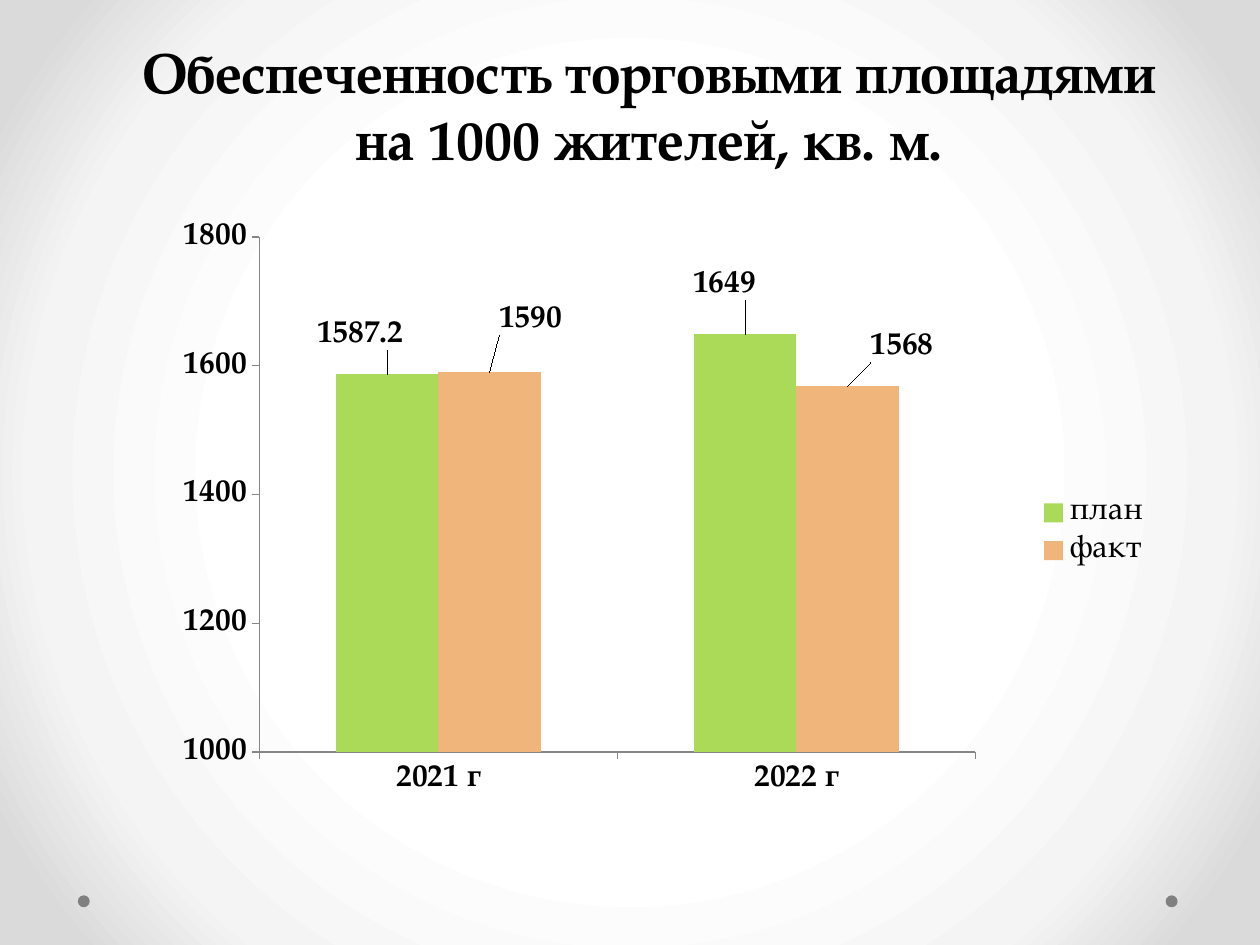
from lxml import etree
from pptx import Presentation
from pptx import util as u
from pptx.chart import data
from pptx.dml.color import RGBColor
from pptx.enum import chart as ch, shapes, text
from pptx.oxml import parse_xml
from pptx.oxml.ns import nsdecls, qn

HUES = {"ink": "000000", "plan": "ABD958", "fact": "F0B57A",
        "dot": "808080", "axis": "868686"}
GLOW = [(0, "FFFFFF"), (50, "FFFFFF"), (76, "F4F4F4"), (92, "DADADA"), (100, "DADADA")]


def rgb(name):
    return RGBColor.from_string(HUES[name])


def place(item, left, top, width, height):
    item.left, item.top = u.Cm(left), u.Cm(top)
    item.width, item.height = u.Cm(width), u.Cm(height)


def nest(parent, tag, **attrs):
    return etree.SubElement(parent, qn(tag), **attrs)


class Deck:
    """Holds the style and the current slide."""
    face = "TeX Gyre Pagella"

    def __init__(self):
        self.prs = Presentation()
        self.prs.slide_width, self.prs.slide_height = u.Cm(25.4), u.Cm(19.05)
        self.slide = self.prs.slides.add_slide(self.prs.slide_layouts[5])

    def style(self, font, size, bold=False):
        font.name, font.size, font.bold = self.face, u.Pt(size), bold
        font.color.rgb = rgb("ink")

    def glow(self, stops):
        """Fill the background with a round gradient."""
        back = parse_xml(f"<p:bg {nsdecls('p', 'a')}><p:bgPr/></p:bg>")
        grad = nest(back[0], "a:gradFill", rotWithShape="1")
        steps = nest(grad, "a:gsLst")
        for pos, hue in stops:
            step = nest(steps, "a:gs", pos=str(pos * 1000))
            nest(step, "a:srgbClr", val=hue)
        ring = nest(grad, "a:path", path="circle")
        nest(ring, "a:fillToRect", **{side: "50000" for side in "ltrb"})
        nest(back[0], "a:effectLst")
        self.slide.element.cSld.insert(0, back)

    def dot(self, left, top, size):
        dot = self.slide.shapes.add_shape(
            shapes.MSO_SHAPE.OVAL, u.Cm(left), u.Cm(top), u.Cm(size), u.Cm(size))
        dot.shadow.inherit = False
        dot.fill.solid()
        dot.fill.fore_color.rgb = rgb("dot")
        dot.line.fill.background()

    def title(self, words, box):
        title = self.slide.shapes.title
        place(title, *box)
        frame = title.text_frame
        frame.text, frame.word_wrap = words, True
        frame.auto_size = text.MSO_AUTO_SIZE.NONE
        frame.vertical_anchor = text.MSO_ANCHOR.MIDDLE
        for para in frame.paragraphs:
            para.alignment = text.PP_ALIGN.CENTER
            for run in para.runs:
                self.style(run.font, 32, True)

    def chart(self, cats, rows, box):
        """Draw clustered columns; rows hold name, hue, values, label shifts."""
        table = data.CategoryChartData()
        table.categories = cats
        for name, _, vals, _ in rows:
            table.add_series(name, vals)
        chart = self.slide.shapes.add_chart(
            ch.XL_CHART_TYPE.COLUMN_CLUSTERED, *map(u.Cm, box), table).chart
        self.style(chart.font, 18)
        chart.has_title = False
        chart.has_legend = True
        chart.legend.position = ch.XL_LEGEND_POSITION.RIGHT
        chart.legend.include_in_layout = False
        self.style(chart.legend.font, 18)
        for axis in (chart.category_axis, chart.value_axis):
            axis.has_major_gridlines = False
            axis.major_tick_mark = ch.XL_TICK_MARK.OUTSIDE
            axis.minor_tick_mark = ch.XL_TICK_MARK.NONE
            axis.format.line.color.rgb = rgb("axis")
            axis.format.line.width = u.Pt(0.75)
            self.style(axis.tick_labels.font, 18, True)
        scale = chart.value_axis
        scale.minimum_scale, scale.maximum_scale, scale.major_unit = 1000, 1800, 200
        plot = chart.plots[0]
        plot.gap_width, plot.overlap, plot.vary_by_categories = 150, 0, False
        for series, (_, hue, _, shifts) in zip(plot.series, rows):
            series.format.fill.solid()
            series.format.fill.fore_color.rgb = rgb(hue)
            self.label(series, shifts)
        self.inset(chart, x=0.123, y=0.036, w=0.694, h=0.811)

    def label(self, series, shifts):
        """Show the values, each moved by a share of the chart's size."""
        labels = series.data_labels
        labels.show_value = True
        self.style(labels.font, 18, True)
        for i, (dx, dy) in enumerate(shifts):
            mark = series.points[i].data_label
            self.style(mark.font, 18, True)
            mark.position = ch.XL_LABEL_POSITION.OUTSIDE_END
        for node, (dx, dy) in zip(series._element.iter(qn("c:dLbl")), shifts):
            node.insert(1, self.layout(x=dx, y=dy))

    def layout(self, **parts):
        root = parse_xml(f"<c:layout {nsdecls('c')}><c:manualLayout/></c:layout>")
        for key, val in parts.items():
            nest(root[0], f"c:{key}", val=str(val))
        return root

    def inset(self, chart, **parts):
        """Fix the inner plot area."""
        area = chart._chartSpace.find(".//" + qn("c:plotArea"))
        for old in area.findall(qn("c:layout")):
            area.remove(old)
        area.insert(0, self.layout(layoutTarget="inner", xMode="edge",
                                   yMode="edge", **parts))


def main():
    deck = Deck()
    deck.glow(GLOW)
    for left in (23.5, 1.57):
        deck.dot(left, 18.05, 0.24)
    deck.title("Обеспеченность торговыми площадями\nна 1000 жителей, кв. м.",
               (1.09, 0.91, 24, 2.39))
    rows = [
        ("план", "plan", (1587.2, 1649), ((-0.026, -0.03), (-0.02, -0.045))),
        ("факт", "fact", (1590, 1568), ((0.04, -0.05), (0.053, -0.03))),
    ]
    deck.chart(("2021 г", "2022 г"), rows, (2.67, 4.32, 20.8, 12.8))
    deck.prs.save("out.pptx")


if __name__ == "__main__":
    main()
